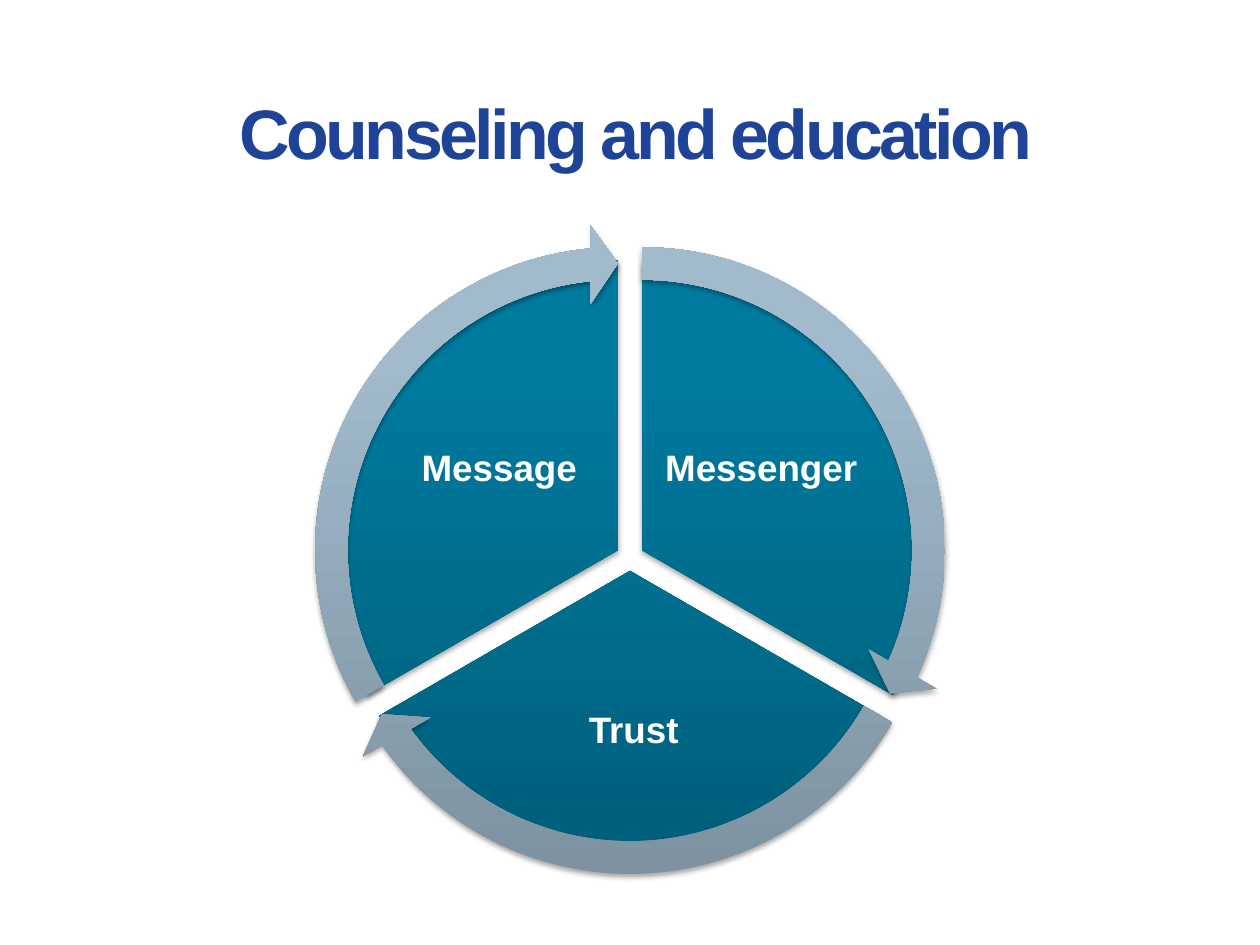
from copy import deepcopy
from dataclasses import dataclass
from math import cos, radians, sin

from lxml import etree
from pptx import Presentation
from pptx.dml.color import RGBColor
from pptx.enum.shapes import MSO_SHAPE
from pptx.enum.text import MSO_ANCHOR, PP_ALIGN
from pptx.oxml.ns import qn
from pptx.util import Cm, Pt

PIE, CIRCULAR_ARROW = MSO_SHAPE.PIE, MSO_SHAPE.CIRCULAR_ARROW
MIDDLE, BOTTOM = MSO_ANCHOR.MIDDLE, MSO_ANCHOR.BOTTOM
CENTER = PP_ALIGN.CENTER

TITLE = "Counseling and education"
TITLE_BOX = (0.2, 1.83, 25, 1.75)
# Label and its text box in cm, clockwise from the top
SECTORS = [
    ("Messenger", (13.26, 7.72, 4.17, 3.48)),
    ("Trust", (9.65, 13.23, 6.25, 3.05)),
    ("Message", (7.98, 7.72, 4.17, 3.48)),
]

CENTER_X, CENTER_Y = 12.7, 11.23
GAP = 0.28  # distance each sector moves out from the centre
PIE_SIZE, ARROW_SIZE = 11.68, 13.13
HEAD_ANGLE = 5.46
TOP_ANGLE = 270
SWEEP = 360 / len(SECTORS)
ADJUSTMENT_PER_DEGREE = 0.6


@dataclass(frozen=True)
class Theme:
    font: str = "Arial"
    title_size: int = 40
    label_size: int = 21
    title: str = "1F4397"
    label: str = "FFFFFF"
    pie: tuple = ((0, "005E7A"), (0.8, "007A9E"), (1, "007B9F"))
    arrow: tuple = ((0, "7C909E"), (0.8, "A1BBCD"), (1, "A1BCCF"))
    shadow: str = "000000"


THEME = Theme()


def fill_gradient(shape, stops):
    """Fill from bottom to top with any number of stops."""
    shape.fill.gradient()
    shape.fill.gradient_angle = 90
    stop_list = shape._element.spPr.find(".//" + qn("a:gsLst"))
    while len(stop_list) < len(stops):
        stop_list.append(deepcopy(stop_list[-1]))
    for stop, (position, color) in zip(shape.fill.gradient_stops, stops):
        stop.position = position
        stop.color.rgb = RGBColor.from_string(color)


def add_shadow(shape):
    shape.shadow.inherit = False
    effects = shape._element.spPr.find(qn("a:effectLst"))
    shadow = etree.SubElement(
        effects, qn("a:outerShdw"), blurRad=str(Pt(3.1)), dist=str(Pt(1.8)),
        dir="5400000", rotWithShape="0")
    color = etree.SubElement(shadow, qn("a:srgbClr"), val=THEME.shadow)
    etree.SubElement(color, qn("a:alpha"), val="35000")


def add_round_shape(slide, kind, middle, size, adjustments, stops):
    left, top = (coordinate - size / 2 for coordinate in middle)
    shape = slide.shapes.add_shape(kind, Cm(left), Cm(top), Cm(size), Cm(size))
    for index, value in enumerate(adjustments):
        shape.adjustments[index] = value
    fill_gradient(shape, stops)
    shape.line.fill.background()
    add_shadow(shape)


def add_text(slide, text, box, size, color, anchor, margins, line_spacing):
    frame = slide.shapes.add_textbox(*map(Cm, box)).text_frame
    frame.word_wrap = True
    frame.vertical_anchor = anchor
    frame.margin_left = frame.margin_right = Cm(margins[0])
    frame.margin_top = frame.margin_bottom = Cm(margins[1])
    paragraph = frame.paragraphs[0]
    paragraph.text = text
    paragraph.alignment = CENTER
    paragraph.line_spacing = line_spacing
    font = paragraph.font
    font.name, font.size, font.bold = THEME.font, Pt(size), True
    font.color.rgb = RGBColor.from_string(color)
    return paragraph


def add_cycle(slide):
    arrows = []
    for index, (label, box) in enumerate(SECTORS):
        start = (TOP_ANGLE + index * SWEEP) % 360
        end = (start + SWEEP) % 360
        direction = radians(start + SWEEP / 2)
        middle = (CENTER_X + GAP * cos(direction), CENTER_Y + GAP * sin(direction))
        first, last, head, head_end = (
            angle * ADJUSTMENT_PER_DEGREE
            for angle in (start, end, HEAD_ANGLE, end - HEAD_ANGLE))
        add_round_shape(slide, PIE, middle, PIE_SIZE, (first, last), THEME.pie)
        paragraph = add_text(slide, label, box, THEME.label_size, THEME.label,
                             MIDDLE, (0.07, 0.07), 0.9)
        paragraph.space_after = Pt(7.35)
        arrows.append((middle, (0.05, head, head_end, first, 0.06)))
    for middle, adjustments in arrows:
        add_round_shape(slide, CIRCULAR_ARROW, middle, ARROW_SIZE, adjustments, THEME.arrow)


def add_title(slide):
    paragraph = add_text(slide, TITLE, TITLE_BOX, THEME.title_size, THEME.title,
                         BOTTOM, (0.18, 0.1), 0.8)
    paragraph._p.get_or_add_pPr().set("marL", str(Cm(0.25)))
    paragraph.runs[0]._r.get_or_add_rPr().set("spc", "-200")


def main():
    presentation = Presentation()
    presentation.slide_width, presentation.slide_height = Cm(25.4), Cm(19.05)
    slide = presentation.slides.add_slide(presentation.slide_layouts[6])
    add_cycle(slide)
    add_title(slide)
    presentation.save("out.pptx")


if __name__ == "__main__":
    main()
